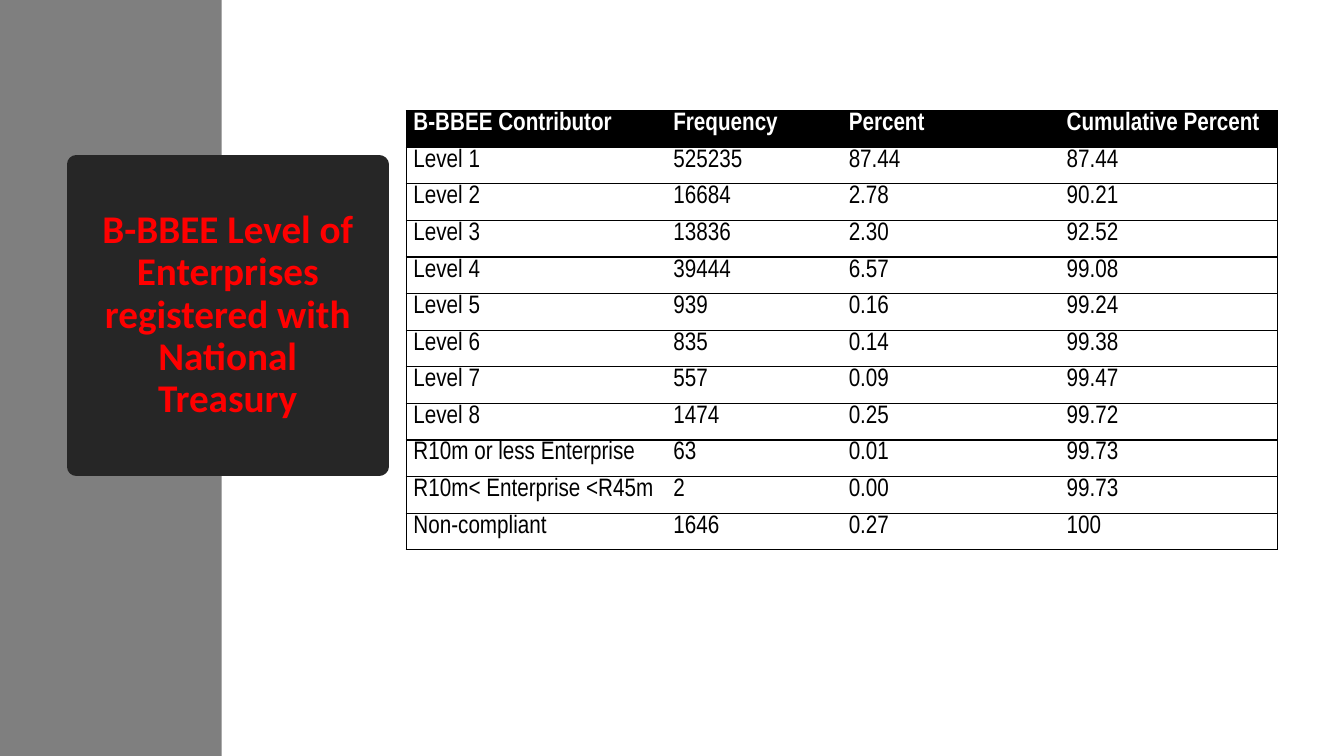
from dataclasses import astuple, dataclass

from lxml.etree import SubElement
from pptx import Presentation
from pptx.dml.color import RGBColor as RGB
from pptx.enum.shapes import MSO_SHAPE as Shape
from pptx.enum.text import MSO_ANCHOR as Anchor, MSO_AUTO_SIZE as AutoSize, PP_ALIGN as Align
from pptx.oxml.ns import qn
from pptx.util import Cm, Pt

COLORS = {
    "band": "7F7F7F",
    "panel": "262626",
    "title": "FF0000",
    "black": "000000",
    "white": "FFFFFF",
}
NO_GRID_STYLE = "{2D5ABB26-0587-4C30-8999-92F81FD0307C}"
TITLE = "B-BBEE Level of Enterprises registered with National Treasury"


@dataclass(frozen=True)
class LevelRow:
    contributor: str
    frequency: str
    percent: str
    cumulative: str


ROWS = [
    LevelRow("B-BBEE Contributor", "Frequency", "Percent", "Cumulative Percent"),
    LevelRow("Level 1", "525235", "87.44", "87.44"),
    LevelRow("Level 2", "16684", "2.78", "90.21"),
    LevelRow("Level 3", "13836", "2.30", "92.52"),
    LevelRow("Level 4", "39444", "6.57", "99.08"),
    LevelRow("Level 5", "939", "0.16", "99.24"),
    LevelRow("Level 6", "835", "0.14", "99.38"),
    LevelRow("Level 7", "557", "0.09", "99.47"),
    LevelRow("Level 8", "1474", "0.25", "99.72"),
    LevelRow("R10m or less Enterprise", "63", "0.01", "99.73"),
    LevelRow("R10m< Enterprise <R45m", "2", "0.00", "99.73"),
    LevelRow("Non-compliant", "1646", "0.27", "100"),
]
COL_WIDTHS = [6.55, 4.42, 5.49, 5.49]
TABLE_HEIGHT = 11.07


def color(name: str) -> RGB:
    return RGB.from_string(COLORS[name])


def write(tf, text: str, *, font: str, size: float, fill: str, bold: bool = False,
          align=Align.LEFT, spacing: float = 1.0) -> None:
    p = tf.paragraphs[0]
    p.alignment = align
    p.line_spacing = spacing
    r = p.add_run()
    r.text = text
    r.font.name = font
    r.font.size = Pt(size)
    r.font.bold = bold
    r.font.color.rgb = color(fill)


def add_borders(cell, sides: str) -> None:
    tc_pr = cell._tc.get_or_add_tcPr()
    for side in sides:
        ln = SubElement(tc_pr, qn(f"a:ln{side}"), w=str(Pt(1)))
        fill = SubElement(ln, qn("a:solidFill"))
        SubElement(fill, qn("a:srgbClr"), val=COLORS["black"])


def add_band(s) -> None:
    band = s.shapes.add_shape(Shape.RECTANGLE, 0, 0, Cm(5.59), Cm(19.05))
    band.shadow.inherit = False
    band.fill.solid()
    band.fill.fore_color.rgb = color("band")
    band.line.fill.background()
    s.shapes.element.insert(2, band.element)


def add_title(s) -> None:
    sp = s.shapes.title
    sp.left, sp.top, sp.width, sp.height = Cm(1.93), Cm(4.14), Cm(7.62), Cm(7.62)
    geometry = SubElement(sp.element.spPr, qn("a:prstGeom"), prst="ellipse")
    SubElement(geometry, qn("a:avLst"))
    sp.fill.solid()
    sp.fill.fore_color.rgb = color("panel")
    sp.line.color.rgb = color("panel")
    sp.line.width = Pt(13.75)
    SubElement(sp.line._ln, qn("a:round"))
    tf = sp.text_frame
    tf.word_wrap = True
    tf.auto_size = AutoSize.NONE
    tf.vertical_anchor = Anchor.MIDDLE
    write(tf, TITLE, font="Calibri", size=28, fill="title", bold=True,
          align=Align.CENTER, spacing=0.9)


def add_levels(s, rows: list[LevelRow]) -> None:
    frame = s.shapes.add_table(len(rows), len(COL_WIDTHS), Cm(10.24), Cm(2.79),
                               Cm(sum(COL_WIDTHS)), Cm(TABLE_HEIGHT))
    table = frame.table
    table.horz_banding = False
    table._tbl.tblPr.find(qn("a:tableStyleId")).text = NO_GRID_STYLE
    for column, width in zip(table.columns, COL_WIDTHS):
        column.width = Cm(width)
    last = len(COL_WIDTHS) - 1
    for i, row in enumerate(rows):
        table.rows[i].height = Cm(TABLE_HEIGHT / len(rows))
        header = i == 0
        for j, text in enumerate(astuple(row)):
            cell = table.cell(i, j)
            cell.margin_left = cell.margin_right = Cm(0.18)
            cell.margin_top = cell.margin_bottom = 0
            add_borders(cell, {0: "LTB", last: "RTB"}.get(j, "TB"))
            cell.fill.solid()
            cell.fill.fore_color.rgb = color("black" if header else "white")
            write(cell.text_frame, text, font="Arial Narrow", size=18,
                  fill="white" if header else "black", bold=header, spacing=1.07)


def main() -> None:
    prs = Presentation()
    prs.slide_width, prs.slide_height = Cm(33.87), Cm(19.05)
    s = prs.slides.add_slide(prs.slide_layouts.get_by_name("Title Only"))
    add_band(s)
    add_title(s)
    add_levels(s, ROWS)
    prs.save("out.pptx")


if __name__ == "__main__":
    main()
